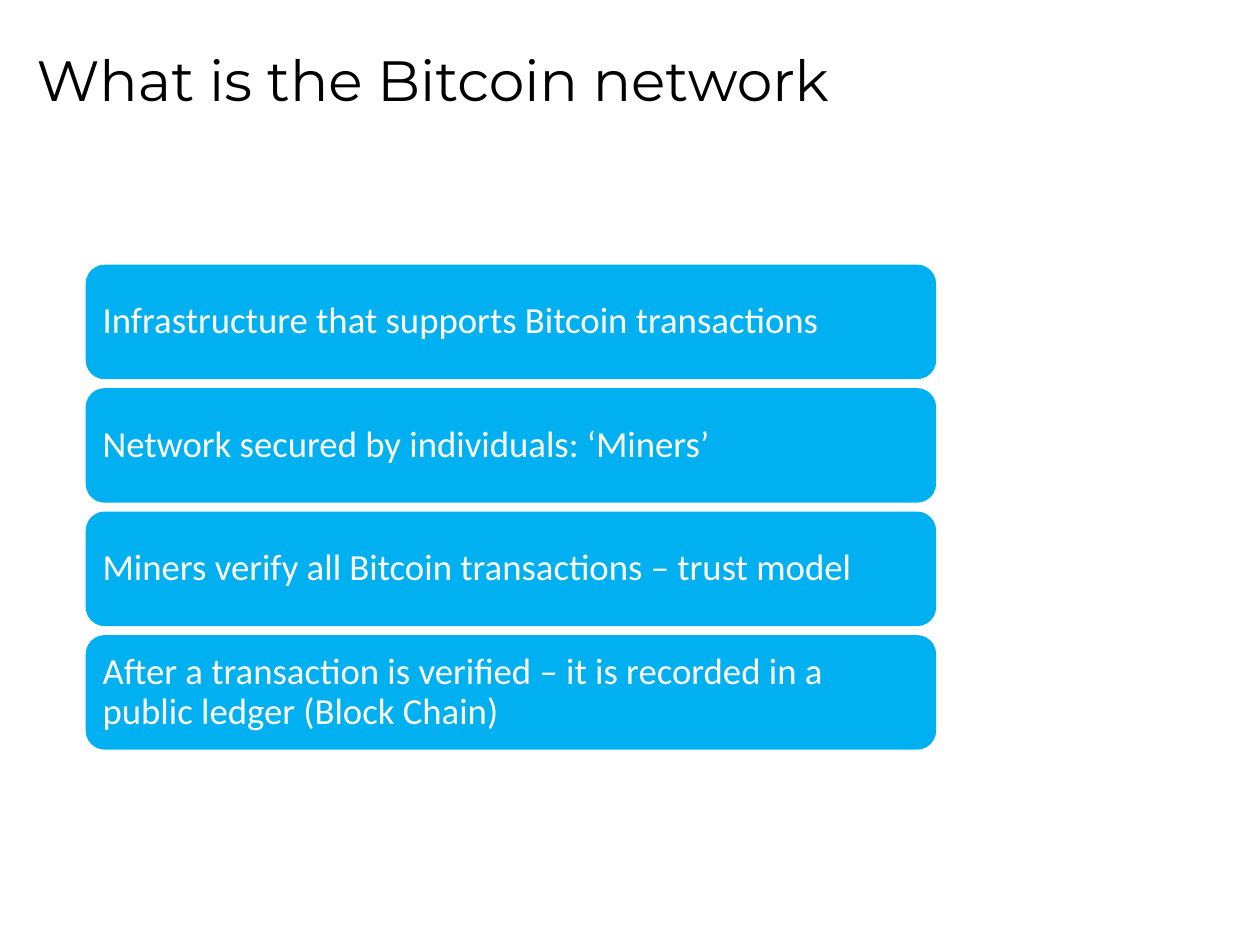
"""Build a slide that explains the Bitcoin network in four stacked bars."""
import pptx
import pptx.util
import pptx.dml.color
import pptx.enum.shapes
import pptx.enum.text

Inches = pptx.util.Inches
Color = pptx.dml.color.RGBColor
Anchor = pptx.enum.text.MSO_ANCHOR

BLACK = Color(0x00, 0x00, 0x00)
WHITE = Color(0xFF, 0xFF, 0xFF)
BLUE = Color(0x00, 0xB0, 0xF0)

TITLE = "What is the Bitcoin network"
POINTS = [
    "Infrastructure that supports Bitcoin transactions",
    "Network secured by individuals: ‘Miners’",
    "Miners verify all Bitcoin transactions – trust model",
    "After a transaction is verified – it is recorded in a public ledger (Block Chain)",
]
LEFT, TOP, WIDTH, HEIGHT, STEP = 0.68, 2.1, 6.75, 0.91, 0.98


def write(shape, text, font, size, color, anchor, side, edge):
    frame = shape.text_frame
    frame.word_wrap = True
    frame.auto_size = pptx.enum.text.MSO_AUTO_SIZE.NONE
    frame.vertical_anchor = anchor
    frame.margin_left = frame.margin_right = Inches(side)
    frame.margin_top = frame.margin_bottom = Inches(edge)
    frame.text = text
    para = frame.paragraphs[0]
    para.alignment = pptx.enum.text.PP_ALIGN.LEFT
    para.line_spacing = 0.9
    para.font.name = font
    para.font.size = pptx.util.Pt(size)
    para.font.color.rgb = color


def main():
    deck = pptx.Presentation()
    deck.slide_width, deck.slide_height = Inches(10), Inches(7.5)
    slide = deck.slides.add_slide(deck.slide_layouts[5])

    title = slide.shapes.title
    title.left, title.top = Inches(0.19), Inches(0.37)
    title.width, title.height = Inches(7.16), Inches(1.09)
    write(title, TITLE, font="Montserrat", size=32.4, color=BLACK,
          anchor=Anchor.TOP, side=0.1, edge=0.05)

    for row, point in enumerate(POINTS):
        bar = slide.shapes.add_shape(
            pptx.enum.shapes.MSO_SHAPE.ROUNDED_RECTANGLE,
            Inches(LEFT), Inches(TOP + row * STEP), Inches(WIDTH), Inches(HEIGHT))
        bar.shadow.inherit = False
        bar.fill.solid()
        bar.fill.fore_color.rgb = BLUE
        bar.line.fill.background()
        write(bar, point, font="Calibri", size=21, color=WHITE,
              anchor=Anchor.MIDDLE, side=0.09, edge=0.09)

    deck.save("out.pptx")


if __name__ == "__main__":
    main()
